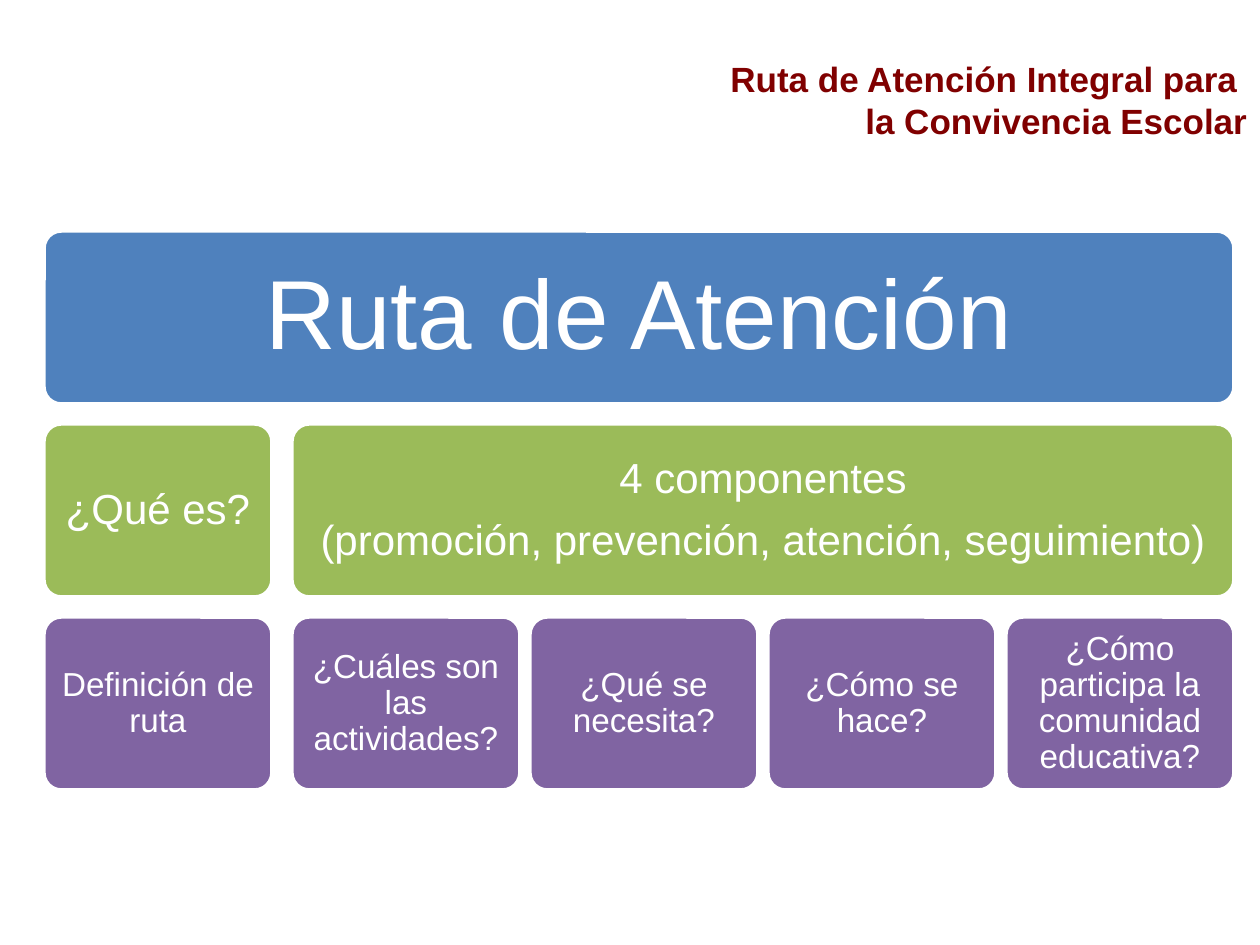
from pptx import Presentation
from pptx.dml.color import RGBColor
from pptx.enum.shapes import MSO_SHAPE
from pptx.enum.text import MSO_ANCHOR, MSO_AUTO_SIZE, PP_ALIGN
from pptx.util import Pt

PX = 914400 / 126
FONT = "Arial"
WHITE = RGBColor(0xFF, 0xFF, 0xFF)
MAROON = RGBColor(0x80, 0x00, 0x00)
BLUE = RGBColor(0x4F, 0x81, 0xBD)
GREEN = RGBColor(0x9B, 0xBB, 0x59)
PURPLE = RGBColor(0x80, 0x64, 0xA2)

# Level styles: fill, text size in points, inset in px
ROOT = (BLUE, 56, 29)
BRANCH = (GREEN, 24, 12)
LEAF = (PURPLE, 19, 10)

ROW_H, ROW_GAP = 173, 20
BRANCH_GAP, LEAF_GAP = 20, 10
BRANCHES = [
    (["¿Qué es?"], ["Definición de ruta"]),
    (
        ["4 componentes", "(promoción, prevención, atención, seguimiento)"],
        [
            "¿Cuáles son las actividades?",
            "¿Qué se necesita?",
            "¿Cómo se hace?",
            "¿Cómo participa la comunidad educativa?",
        ],
    ),
]


def px(n):
    return round(n * PX)


def add_title(s, x, y, w, h, lines):
    title = s.shapes.title
    title.left, title.top, title.width, title.height = map(px, (x, y, w, h))
    tf = title.text_frame
    tf.text = "\n".join(lines)
    tf.auto_size = MSO_AUTO_SIZE.NONE
    tf.vertical_anchor = MSO_ANCHOR.MIDDLE
    for p in tf.paragraphs:
        p.alignment = PP_ALIGN.RIGHT
        p.font.name, p.font.size, p.font.bold = FONT, Pt(20), True
        p.font.color.rgb = MAROON


def add_card(shapes, x, y, w, h, lines, style):
    fill, size, inset = style
    sp = shapes.add_shape(MSO_SHAPE.ROUNDED_RECTANGLE, *map(px, (x, y, w, h)))
    sp.adjustments[0] = 0.1
    sp.shadow.inherit = False
    sp.fill.solid()
    sp.fill.fore_color.rgb = fill
    sp.line.color.rgb = WHITE
    sp.line.width = Pt(2)
    tf = sp.text_frame
    tf.word_wrap = True
    tf.vertical_anchor = MSO_ANCHOR.MIDDLE
    tf.margin_left = tf.margin_top = tf.margin_right = tf.margin_bottom = px(inset)
    tf.text = "\n".join(lines)
    for p in tf.paragraphs:
        p.alignment = PP_ALIGN.CENTER
        p.line_spacing = 0.9
        p.space_after = Pt(round(size * 0.4, 1))
        p.font.name, p.font.size = FONT, Pt(size)
        p.font.color.rgb = WHITE


def add_hierarchy(s, x, y, w, root, branches):
    """Stack root, branches and leaves, each branch as wide as its leaves."""
    shapes = s.shapes.add_group_shape().shapes
    pitch = ROW_H + ROW_GAP
    leaf_count = sum(len(leaves) for _, leaves in branches)
    gaps = (len(branches) - 1) * BRANCH_GAP + (leaf_count - len(branches)) * LEAF_GAP
    leaf_w = (w - gaps) // leaf_count

    add_card(shapes, x, y, w, ROW_H, [root], ROOT)
    for lines, leaves in branches:
        branch_w = len(leaves) * (leaf_w + LEAF_GAP) - LEAF_GAP
        add_card(shapes, x, y + pitch, branch_w, ROW_H, lines, BRANCH)
        for i, leaf in enumerate(leaves):
            leaf_x = x + i * (leaf_w + LEAF_GAP)
            add_card(shapes, leaf_x, y + 2 * pitch, leaf_w, ROW_H, [leaf], LEAF)
        x += branch_w + BRANCH_GAP


def main():
    prs = Presentation()
    prs.slide_width, prs.slide_height = px(1260), px(945)
    s = prs.slides.add_slide(prs.slide_layouts[5])
    add_title(s, 407, 35, 853, 129,
              ["Ruta de Atención Integral para ", "la Convivencia Escolar"])
    add_hierarchy(s, 44, 231, 1190, "Ruta de Atención", BRANCHES)
    prs.save("out.pptx")


if __name__ == "__main__":
    main()
